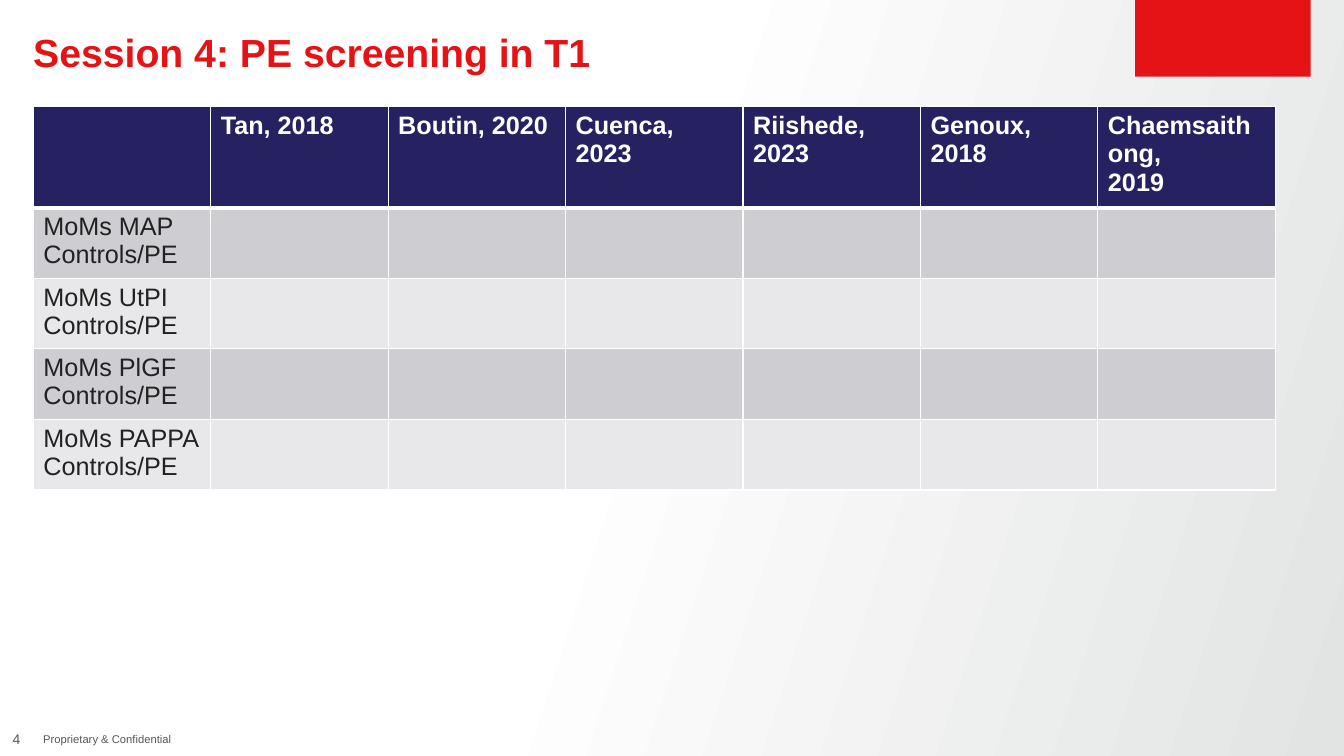
from lxml.etree import SubElement
from pptx import Presentation
from pptx.dml.color import RGBColor
from pptx.enum.shapes import MSO_SHAPE
from pptx.enum.text import MSO_ANCHOR, PP_ALIGN
from pptx.oxml.ns import qn
from pptx.util import Inches, Pt

COLORS = {
    "red": "E61316", "navy": "262160", "white": "FFFFFF", "ink": "222222",
    "footer": "545859", "band_dark": "CDCDD2", "band_light": "E8E8EA",
    "backdrop_end": "E2E3E3",
}
MARGIN = 0.33
FOOTER_TOP = 7.17
COLUMN_WIDTH = 1.76
HEADER_HEIGHT = 0.94
ROW_HEIGHT = 0.66
STUDIES = ["Tan, 2018", "Boutin, 2020", "Cuenca, 2023", "Riishede, 2023",
           "Genoux, 2018", "Chaemsaithong,\n2019"]
MARKERS = ["MAP", "UtPI", "PlGF", "PAPPA"]


def rgb(color):
    return RGBColor.from_string(COLORS[color])


def box(left, top, width, height):
    return [Inches(length) for length in (left, top, width, height)]


def style_text(frame, size, color, bold=False):
    for paragraph in frame.paragraphs:
        for run in paragraph.runs:
            run.font.name = "Arial"
            run.font.size = Pt(size)
            run.font.bold = bold
            run.font.color.rgb = rgb(color)


def add_label(slide, place, text, size, color, bold=False, inset=0.0):
    frame = slide.shapes.add_textbox(*box(*place)).text_frame
    frame.word_wrap = True
    frame.vertical_anchor = MSO_ANCHOR.MIDDLE
    frame.margin_left = frame.margin_right = Inches(inset)
    frame.margin_top = frame.margin_bottom = 0
    frame.text = text
    style_text(frame, size, color, bold)
    return frame.paragraphs[0]


def paint_backdrop(slide):
    fill = slide.background.fill
    fill.gradient()
    fill.gradient_angle = 342
    stops = zip(fill.gradient_stops, (0.45, 1), ("white", "backdrop_end"))
    for stop, position, color in stops:
        stop.position = position
        stop.color.rgb = rgb(color)


def add_corner_block(slide):
    block = slide.shapes.add_shape(MSO_SHAPE.RECTANGLE, *box(11.26, 0, 1.74, 0.76))
    block.shadow.inherit = False
    block.fill.solid()
    block.fill.fore_color.rgb = rgb("red")
    block.line.fill.background()


def set_borders(cell, top, bottom):
    properties = cell._tc.get_or_add_tcPr()
    for side, points in (("L", 1), ("R", 1), ("T", top), ("B", bottom)):
        line = SubElement(properties, qn(f"a:ln{side}"), w=str(Pt(points)))
        fill = SubElement(line, qn("a:solidFill"))
        SubElement(fill, qn("a:srgbClr"), val=COLORS["white"])


def fill_cell(cell, row, text):
    header = row == 0
    set_borders(cell, 3 if row == 1 else 1, 3 if header else 1)
    cell.fill.solid()
    band = "band_dark" if row % 2 else "band_light"
    cell.fill.fore_color.rgb = rgb("navy" if header else band)
    cell.text = text
    style_text(cell.text_frame, 18, "white" if header else "ink", header)


def add_study_table(slide):
    blanks = [""] * len(STUDIES)
    rows = [["", *STUDIES]]
    rows += [[f"MoMs {marker}\nControls/PE", *blanks] for marker in MARKERS]
    columns = len(rows[0])
    height = HEADER_HEIGHT + ROW_HEIGHT * len(MARKERS)
    place = box(MARGIN, 1.06, COLUMN_WIDTH * columns, height)
    table = slide.shapes.add_table(len(rows), columns, *place).table
    table.horz_banding = False
    for column in table.columns:
        column.width = Inches(COLUMN_WIDTH)
    for row, texts in enumerate(rows):
        table.rows[row].height = Inches(ROW_HEIGHT if row else HEADER_HEIGHT)
        for column, text in enumerate(texts):
            fill_cell(table.cell(row, column), row, text)


def main():
    """Build the preeclampsia screening slide and save it."""
    deck = Presentation()
    deck.slide_width, deck.slide_height = Inches(13.33), Inches(7.5)
    slide = deck.slides.add_slide(deck.slide_layouts[6])
    paint_backdrop(slide)
    add_corner_block(slide)
    title = add_label(slide, (MARGIN, 0.33, 10.67, 0.42),
                      "Session 4: PE screening in T1", 28, "red", bold=True)
    title.line_spacing = 0.9
    page = add_label(slide, (0, FOOTER_TOP, MARGIN, 0.33), "4", 10, "footer")
    page.alignment = PP_ALIGN.CENTER
    add_label(slide, (MARGIN, FOOTER_TOP, 4.91, 0.33),
              "Proprietary & Confidential", 8, "footer", inset=0.1)
    add_study_table(slide)
    deck.save("out.pptx")


if __name__ == "__main__":
    main()
